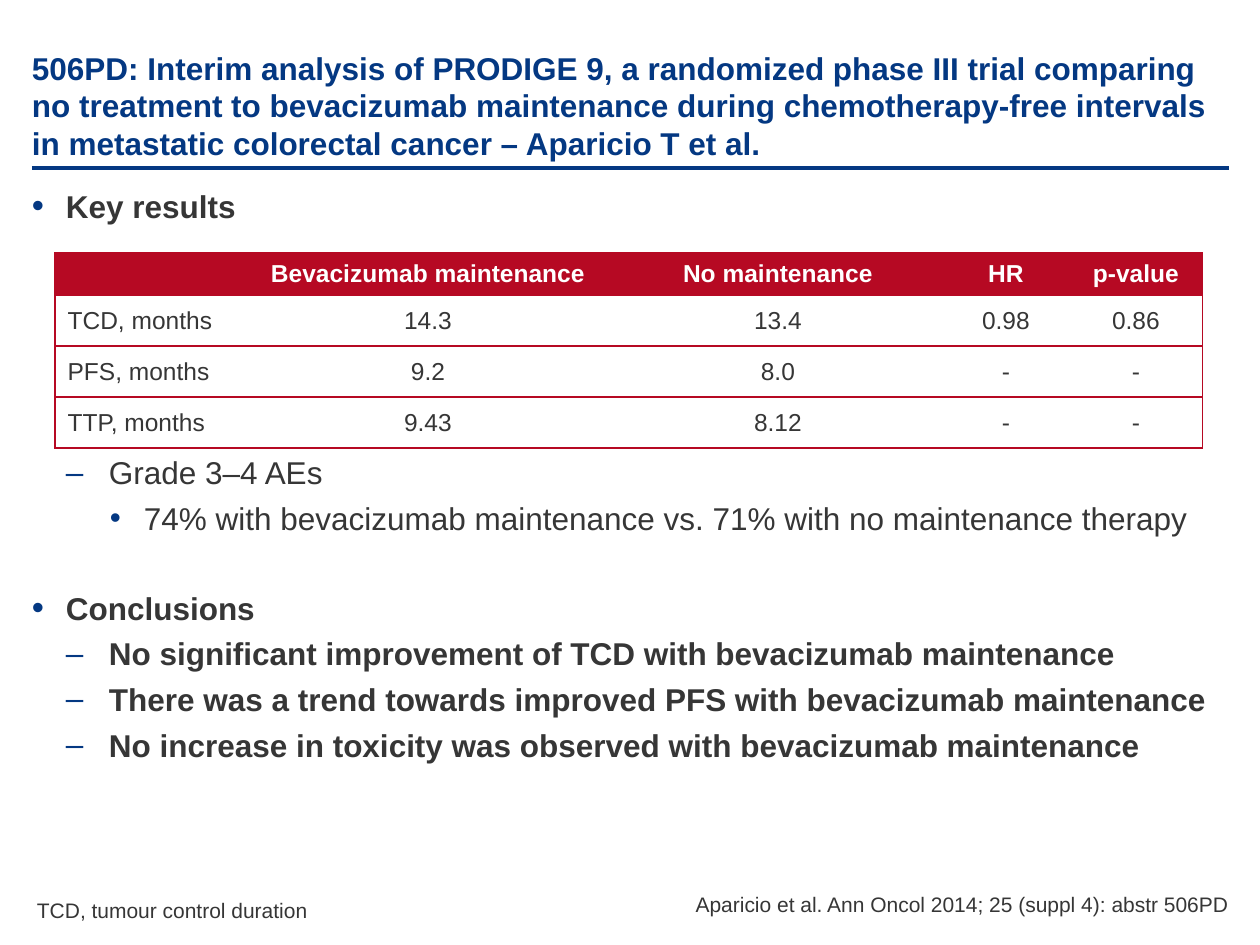
from dataclasses import dataclass

from lxml.etree import SubElement
from pptx import Presentation
from pptx.dml.color import RGBColor
from pptx.enum.shapes import MSO_CONNECTOR
from pptx.enum.text import MSO_ANCHOR, PP_ALIGN
from pptx.oxml.ns import qn
from pptx.util import Pt

EMU_PER_PX = 914400 / 126


@dataclass(frozen=True)
class Theme:
    """Colours, font and type sizes of the slide."""
    font: str = "Arial"
    navy: str = "043882"
    red: str = "B60923"
    ink: str = "363636"
    white: str = "FFFFFF"
    main_size: int = 18
    table_size: int = 14
    note_size: int = 12


THEME = Theme()
LEVELS = (("•", 34, 34, 110), ("–", 77, 43, 100), ("•", 112, 34, 100))
TITLE = ("506PD: Interim analysis of PRODIGE 9, a randomized phase III trial comparing "
         "no treatment to bevacizumab maintenance during chemotherapy-free intervals "
         "in metastatic colorectal cancer – Aparicio T et al.")
FINDINGS = (
    (0, "Key results", True, 0),
    (1, "Grade 3–4 AEs", False, 126),
    (2, "74% with bevacizumab maintenance vs. 71% with no maintenance therapy", False, 0),
    (0, "Conclusions", True, 25.2),
    (1, "No significant improvement of TCD with bevacizumab maintenance", True, 0),
    (1, "There was a trend towards improved PFS with bevacizumab maintenance", True, 0),
    (1, "No increase in toxicity was observed with bevacizumab maintenance", True, 0),
)
RESULTS = (
    ("", "Bevacizumab maintenance", "No maintenance", "HR", "p-value"),
    ("TCD, months", "14.3", "13.4", "0.98", "0.86"),
    ("PFS, months", "9.2", "8.0", "-", "-"),
    ("TTP, months", "9.43", "8.12", "-", "-"),
)
COLUMN_WIDTHS = (188, 370, 330, 126, 134)
ROW_HEIGHTS = (42, 51, 51, 51)


def px(length):
    """Turn pixels into EMU."""
    return round(length * EMU_PER_PX)


def write(paragraph, text, *, size, color=THEME.ink, bold=False,
          align=PP_ALIGN.LEFT, before=0, after=0):
    """Put formatted text in a paragraph."""
    paragraph.alignment = align
    paragraph.space_before = Pt(before)
    paragraph.space_after = Pt(after)
    font = paragraph.font
    if text:
        run = paragraph.add_run()
        run.text = text
        font = run.font
    font.name = THEME.font
    font.size = Pt(size)
    font.bold = bold
    font.color.rgb = RGBColor.from_string(color)


def add_frame(slide, left, top, width, height, *, anchor=MSO_ANCHOR.TOP, inset=0):
    """Add a wrapping text box and return its text frame."""
    frame = slide.shapes.add_textbox(px(left), px(top), px(width), px(height)).text_frame
    frame.word_wrap = True
    frame.vertical_anchor = anchor
    frame.margin_left = frame.margin_right = frame.margin_bottom = 0
    frame.margin_top = px(inset)
    return frame


def add_rule(slide, left, right, y):
    """Add the line below the title."""
    rule = slide.shapes.add_connector(MSO_CONNECTOR.STRAIGHT, px(left), px(y), px(right), px(y))
    rule.line.color.rgb = RGBColor.from_string(THEME.navy)
    rule.line.width = Pt(2.25)
    SubElement(rule.element.spPr, qn("a:effectLst"))


def set_bullet(paragraph, level):
    """Give a paragraph the bullet and indent of its level."""
    mark, margin, hanging, percent = LEVELS[level]
    paragraph.level = level
    props = paragraph._p.get_or_add_pPr()
    props.set("marL", str(px(margin)))
    props.set("indent", str(-px(hanging)))
    SubElement(SubElement(props, qn("a:buClr")), qn("a:srgbClr"), val=THEME.navy)
    SubElement(props, qn("a:buSzPct"), val=str(percent * 1000))
    SubElement(props, qn("a:buFont"), typeface=THEME.font)
    SubElement(props, qn("a:buChar"), char=mark)


def add_findings(slide):
    """Add the bulleted findings, leaving room for the table."""
    frame = add_frame(slide, 32, 181, 1197, 698, inset=6)
    for index, (level, text, bold, before) in enumerate(FINDINGS):
        paragraph = frame.add_paragraph() if index else frame.paragraphs[0]
        write(paragraph, text, size=THEME.main_size, bold=bold, before=before, after=4.5)
        set_bullet(paragraph, level)


def set_borders(cell, sides):
    """Draw the given cell sides in red and hide the others."""
    props = cell._tc.get_or_add_tcPr()
    for position, side in enumerate("LRTB"):
        edge = props.makeelement(qn(f"a:ln{side}"), {"w": str(Pt(0.75))})
        props.insert(position, edge)
        if side in sides:
            SubElement(SubElement(edge, qn("a:solidFill")), qn("a:srgbClr"), val=THEME.red)
        else:
            SubElement(edge, qn("a:noFill"))


def add_results(slide):
    """Add the table of efficacy results."""
    table = slide.shapes.add_table(len(RESULTS), len(COLUMN_WIDTHS), px(55), px(253),
                                   px(sum(COLUMN_WIDTHS)), px(sum(ROW_HEIGHTS))).table
    for column, width in zip(table.columns, COLUMN_WIDTHS):
        column.width = px(width)
    last = len(COLUMN_WIDTHS) - 1
    for r, (values, height) in enumerate(zip(RESULTS, ROW_HEIGHTS)):
        table.rows[r].height = px(height)
        for c, value in enumerate(values):
            cell = table.cell(r, c)
            header = r == 0
            cell.vertical_anchor = MSO_ANCHOR.MIDDLE
            cell.fill.solid()
            cell.fill.fore_color.rgb = RGBColor.from_string(THEME.red if header else THEME.white)
            write(cell.text_frame.paragraphs[0], value, size=THEME.table_size, bold=header,
                  color=THEME.white if header else THEME.ink,
                  align=PP_ALIGN.CENTER if c else PP_ALIGN.LEFT)
            set_borders(cell, "TB" + "L" * (c == 0) + "R" * (c == last))


def add_note(slide, text, left, top, width, align):
    """Add a small note at the foot of the slide."""
    frame = add_frame(slide, left, top, width, 25, anchor=MSO_ANCHOR.BOTTOM)
    write(frame.paragraphs[0], text, size=THEME.note_size, align=align)


def main():
    """Build and save the slide."""
    deck = Presentation()
    deck.slide_width, deck.slide_height = px(1260), px(945)
    slide = deck.slides.add_slide(deck.slide_layouts[6])
    add_rule(slide, 32, 1229, 168)
    title = add_frame(slide, 32, 32, 1197, 130, anchor=MSO_ANCHOR.BOTTOM, inset=6)
    write(title.paragraphs[0], TITLE, size=THEME.main_size, color=THEME.navy, bold=True)
    add_findings(slide)
    add_note(slide, "Aparicio et al. Ann Oncol 2014; 25 (suppl 4): abstr 506PD",
             679, 892, 550, PP_ALIGN.RIGHT)
    add_note(slide, "TCD, tumour control duration", 37, 898, 582, PP_ALIGN.LEFT)
    add_results(slide)
    deck.save("out.pptx")


if __name__ == "__main__":
    main()
